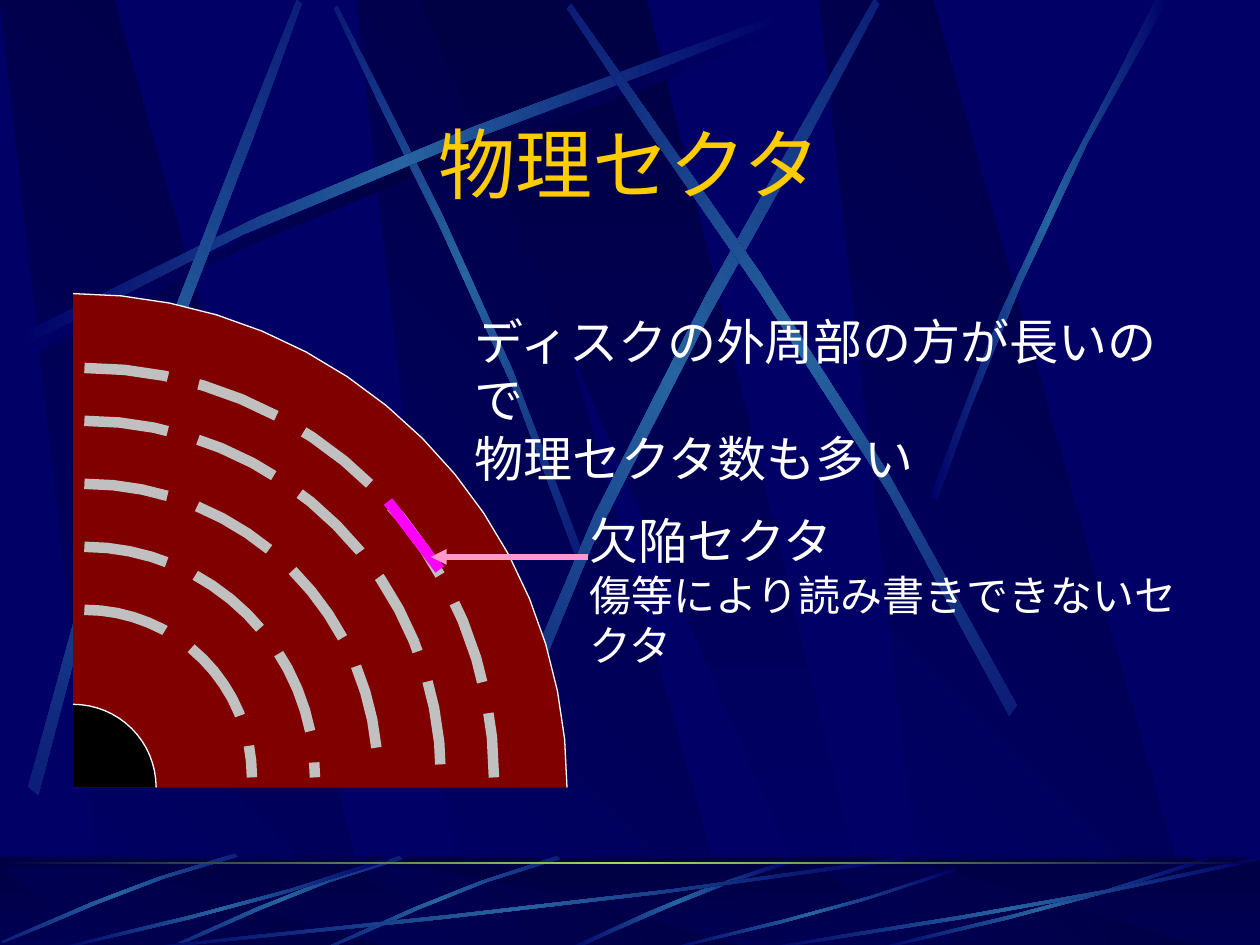
import math

import pptx
import pptx.dml.color
import pptx.enum.dml
import pptx.enum.shapes
import pptx.enum.text
import pptx.oxml
import pptx.oxml.ns
import pptx.util
from pptx.util import Inches

NAVY, DEEP, BLUE, GREEN = "000066", "000044", "2663A0", "9CE157"
GLOW = [(0, NAVY), (50, BLUE), (100, NAVY)]
SHADE = [(0, NAVY), (50, DEEP), (100, NAVY)]
DIAGONAL = [(0, NAVY), (100, DEEP)]
VERTICAL = [(0, DEEP), (100, NAVY)]

# Outlines in a unit box; a streak has two curved edges
STREAK = ([(0, .96), (.43, .43), (.83, .15), (1, 0)],
          [(1, .02), (.84, .19), (.38, .5), (0, 1)])
BAND = [(.28, 1), (1, 1), (.3, 0), (0, 0)]
WEDGE = [(0, 0), (.9, 1), (1, 1), (.5, 0)]


def rgb(value):
    return pptx.dml.color.RGBColor.from_string(value)


def curved(edges, steps=4):
    """Sample cubic Bezier edges and chain them into one outline."""
    outline = []
    for edge in edges:
        for step in range(steps + 1):
            t = step / steps
            weights = ((1 - t) ** 3, 3 * t * (1 - t) ** 2, 3 * t * t * (1 - t), t ** 3)
            outline.append(tuple(sum(w * p[axis] for w, p in zip(weights, edge))
                                 for axis in (0, 1)))
    return outline


def quarter(left, bottom, radius, steps=16):
    """Points from the top of a circle clockwise to its right side."""
    angles = [math.pi / 2 * step / steps for step in range(steps + 1)]
    return [(left + radius * math.sin(a), bottom - radius * math.cos(a)) for a in angles]


class SlideBuilder:
    TEXT = {"name": "Times New Roman", "size": pptx.util.Pt(28)}

    def __init__(self, slide):
        self.slide = slide
        self.shapes = slide.shapes

    def element(self, parent, tag, **attributes):
        child = pptx.oxml.parse_xml(f"<a:{tag} {pptx.oxml.ns.nsdecls('a')}/>")
        for key, value in attributes.items():
            child.set(key, str(value))
        parent.append(child)
        return child

    def paint(self, shape, fill=None, angle=0, alpha=None, line=None, width=0.75, dash=None):
        """fill is a hex colour, a list of gradient stops or None."""
        shape.shadow.inherit = False
        properties = shape._element.spPr
        if fill is None:
            shape.fill.background()
        elif isinstance(fill, str):
            shape.fill.solid()
            shape.fill.fore_color.rgb = rgb(fill)
            if alpha is not None:
                colour = properties.find(".//" + pptx.oxml.ns.qn("a:srgbClr"))
                self.element(colour, "alpha", val=alpha * 1000)
        else:
            shape.fill.gradient()
            stops = properties.find(".//" + pptx.oxml.ns.qn("a:gsLst"))
            for stop in list(stops):
                stops.remove(stop)
            for position, colour in fill:
                stop = self.element(stops, "gs", pos=position * 1000)
                self.element(stop, "srgbClr", val=colour)
            properties.find(".//" + pptx.oxml.ns.qn("a:lin")).set("ang", str(angle * 60000))
        if line is None:
            shape.line.fill.background()
        else:
            shape.line.color.rgb = rgb(line)
            shape.line.width = pptx.util.Pt(width)
            if dash:
                shape.line.dash_style = dash

    def outline(self, points, close=True, **style):
        emu = [(Inches(x), Inches(y)) for x, y in points]
        builder = self.shapes.build_freeform(*emu[0], scale=1.0)
        builder.add_line_segments(emu[1:], close=close)
        shape = builder.convert_to_shape()
        self.paint(shape, **style)
        return shape

    def scaled(self, unit, box, flip_h=False, flip_v=False, rotation=0, **style):
        left, top, width, height = box
        points = [(left + width * (1 - x if flip_h else x),
                   top + height * (1 - y if flip_v else y)) for x, y in unit]
        self.outline(points, **style).rotation = rotation

    def rectangle(self, box, **style):
        shape = self.shapes.add_shape(pptx.enum.shapes.MSO_SHAPE.RECTANGLE, *map(Inches, box))
        self.paint(shape, **style)

    def line(self, start, end, colour, width, arrow=False):
        connector = self.shapes.add_connector(
            pptx.enum.shapes.MSO_CONNECTOR.STRAIGHT, *map(Inches, start + end))
        connector.line.color.rgb = rgb(colour)
        connector.line.width = pptx.util.Pt(width)
        if arrow:
            self.element(connector.line._get_or_add_ln(), "tailEnd", type="triangle")
        self.element(connector._element.spPr, "effectLst")

    def text(self, box, paragraphs, colour="FFFFFF", centred=False):
        """paragraphs is a list of (wording, font overrides)."""
        frame = self.shapes.add_textbox(*map(Inches, box)).text_frame
        frame.word_wrap = True
        if centred:
            frame.vertical_anchor = pptx.enum.text.MSO_ANCHOR.MIDDLE
        for index, (wording, overrides) in enumerate(paragraphs):
            paragraph = frame.add_paragraph() if index else frame.paragraphs[0]
            if centred:
                paragraph.alignment = pptx.enum.text.PP_ALIGN.CENTER
            run = paragraph.add_run()
            run.text = wording
            for key, value in {**self.TEXT, **overrides}.items():
                setattr(run.font, key, value)
            run.font.color.rgb = rgb(colour)

    def backdrop(self, top, height):
        for left in (2.83, 0, 6.5):
            self.scaled(BAND, (left, top, 3.02, height), fill=DIAGONAL, angle=315)
        self.scaled(WEDGE, (3.33, top, 3.61, height), fill=VERTICAL, angle=90)

    def sector(self, left, bottom, radius, fill):
        arc = quarter(left, bottom, radius)
        self.outline(arc + [(left, bottom)], fill=fill)
        self.outline(arc, close=False, line="FFFFFF")


def main():
    deck = pptx.Presentation()
    deck.slide_width, deck.slide_height = Inches(10), Inches(7.5)
    page = SlideBuilder(deck.slides.add_slide(deck.slide_layouts[6]))
    page.slide.background.fill.solid()
    page.slide.background.fill.fore_color.rgb = rgb(NAVY)
    ribbon = curved(STREAK)

    # Upper background: bands and light streaks
    page.backdrop(0, 7.5)
    page.scaled(ribbon, (0.2, 0.18, 6.08, 2.67), fill=SHADE)
    for box, rotation, flip in [
        ((1.41, 1.35, 4.42, 1.75), 45, True),
        ((0.14, 0.1, 6.08, 2.67), 0, False),
        ((-1.71, 1.82, 6.08, 2.67), 311.7, False),
        ((2.31, 1.6, 6.24, 3.01), 321.6, False),
        ((3.23, 1.52, 6.08, 2.67), 34.7, True),
    ]:
        page.scaled(ribbon, box, flip_h=flip, rotation=rotation, fill=GLOW)
    page.outline(curved([[(7.38, 3.94), (8.14, 1.73), (8.88, 0.66), (9.17, 0)],
                         [(9.27, 0), (8.36, 1.45), (7.69, 3.22), (7.44, 3.97)]]), fill=GLOW)

    # Footer strip with its own streaks
    footer = (0, 6.8, 10, 0.7)
    page.rectangle(footer, fill=VERTICAL, angle=90)
    page.backdrop(6.88, 0.62)
    page.rectangle(footer, fill=DEEP, alpha=50)
    page.outline(curved([[(6.27, 6.82), (5.37, 7.09), (4.77, 7.42), (4.48, 7.54)],
                         [(4.53, 7.55), (4.9, 7.38), (5.71, 7), (6.28, 6.85)]]), fill=GLOW)
    for box in [(2.58, 6.76, 1.84, 0.83), (1.33, 6.76, 1.84, 0.83), (0.05, 6.71, 1.8, 0.85)]:
        page.scaled(ribbon, box, flip_h=True, rotation=315, fill=GLOW)
    for left, top, width in [(1, 6.8, 6.17), (0.42, 6.8, 2.67), (5.27, 6.89, 2.31),
                             (6.92, 6.8, 2.67), (6, 6.8, 4)]:
        page.scaled(ribbon, (left, top, width, 7.55 - top), flip_h=True, flip_v=True, fill=GLOW)
    page.rectangle((0, 6.84, 10, 0.02), fill=[(0, DEEP), (50, GREEN), (100, DEEP)])

    # Title
    page.text((0.75, 0.88, 8.5, 0.83), [("物理セクタ", {"size": pptx.util.Pt(44)})],
              colour="FFCC00", centred=True)

    # Quarter disk, sector tracks and hub
    page.sector(0.58, 6.25, 3.92, "800000")
    for radius in (3.25, 1.33, 2.83, 2.33, 1.83):
        page.outline(quarter(0.67, 6.17, radius), close=False, line="C0C0C0", width=6,
                     dash=pptx.enum.dml.MSO_LINE.LONG_DASH)
    page.sector(0.58, 6.25, 0.66, "000000")

    # Explanation and defective sector
    page.text((3.67, 2.42, 5.71, 1.03),
              [("ディスクの外周部の方が長いので", {}), ("物理セクタ数も多い", {})])
    page.line((3.08, 3.98), (3.49, 4.52), "FF00FF", 6)
    page.line((4.67, 4.42), (3.42, 4.42), "FF99CC", 3, arrow=True)
    page.text((4.58, 4, 5.02, 0.97),
              [("欠陥セクタ", {}),
               ("傷等により読み書きできないセクタ", {"size": pptx.util.Pt(24)})])

    deck.save("out.pptx")


if __name__ == "__main__":
    main()
